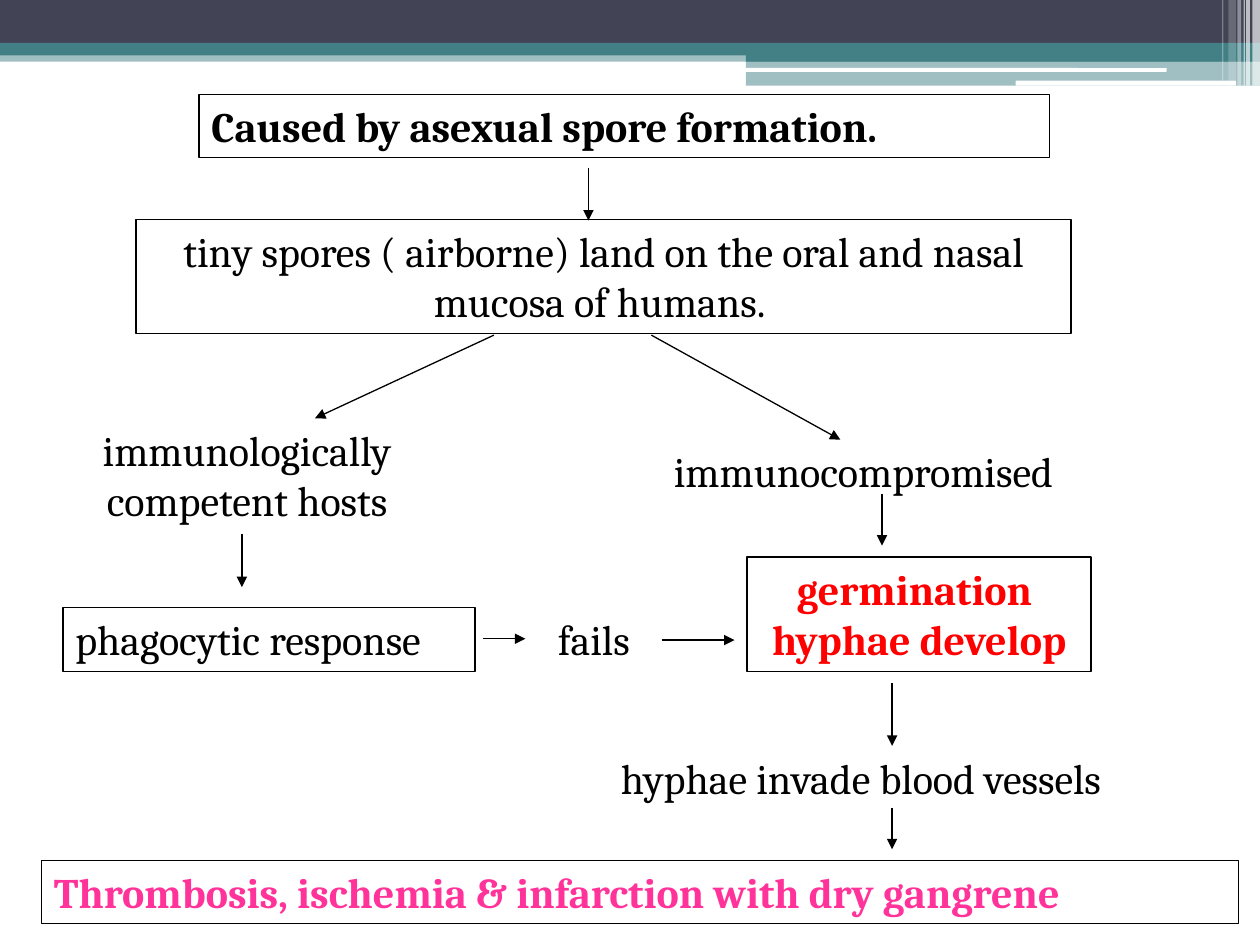
"""Build a flow chart slide on how spores lead to dry gangrene."""
import lxml.etree
import pptx
import pptx.dml.color
import pptx.enum.shapes
import pptx.enum.text
import pptx.oxml
import pptx.oxml.ns
import pptx.util

Inches = pptx.util.Inches
RGBColor = pptx.dml.color.RGBColor
SHAPE = pptx.enum.shapes.MSO_SHAPE
ALIGN = pptx.enum.text.PP_ALIGN
qn = pptx.oxml.ns.qn

BLACK = RGBColor(0x00, 0x00, 0x00)
WHITE = RGBColor(0xFF, 0xFF, 0xFF)
SLATE = RGBColor(0x42, 0x44, 0x56)
TEAL = RGBColor(0x43, 0x80, 0x86)
RED = RGBColor(0xFF, 0x00, 0x00)
PINK = RGBColor(0xFF, 0x33, 0x99)

PLAIN = {"name": "Cambria", "size": pptx.util.Pt(24), "bold": False}
BOLD = {**PLAIN, "bold": True}
FRAME = {"word_wrap": True, "vertical_anchor": pptx.enum.text.MSO_ANCHOR.TOP}

BARS = [
    (0, 0.4, 10, 0.09, TEAL, 50),
    (0, 0, 10, 0.34, SLATE, 100),
    (0, 0.34, 10, 0.1, TEAL, 100),
    (5.92, 0.39, 4.08, 0.1, TEAL, 100),
    (5.92, 0.48, 4.08, 0.2, TEAL, 50),
]
PILLS = [(5.91, 0.54, 3.35, 0.03), (8.06, 0.64, 1.75, 0.04)]
STRIPES = [
    (9.94, 0.06, 0.68, 65),
    (9.89, 0.03, 0.68, 65),
    (9.87, 0.01, 0.68, 60),
    (9.82, 0.03, 0.68, 40),
    (9.75, 0.06, 0.64, 20),
    (9.7, 0.01, 0.64, 30),
]
STEPS = [
    ((1.58, 0.75, 6.75, 0.5), ["Caused by asexual spore formation."],
     BOLD, BLACK, ALIGN.LEFT, True),
    ((1.08, 1.74, 7.42, 0.91),
     ["tiny spores ( airborne) land on the oral and nasal mucosa of humans. "],
     PLAIN, BLACK, ALIGN.CENTER, True),
    ((0.25, 3.32, 3.42, 0.9), ["immunologically competent hosts"],
     PLAIN, BLACK, ALIGN.CENTER, False),
    ((0.5, 4.82, 3.27, 0.51), ["phagocytic response"],
     PLAIN, BLACK, ALIGN.LEFT, True),
    ((4.33, 4.82, 0.89, 0.5), ["fails"], PLAIN, BLACK, ALIGN.LEFT, False),
    ((5.25, 3.49, 3.39, 0.5), ["immunocompromised"],
     PLAIN, BLACK, ALIGN.LEFT, False),
    ((5.93, 4.42, 2.73, 0.91), ["germination ", "hyphae develop"],
     BOLD, RED, ALIGN.CENTER, True),
    ((4.83, 5.92, 4.49, 0.5), ["hyphae invade blood vessels"],
     PLAIN, BLACK, ALIGN.LEFT, False),
    ((0.33, 6.83, 9.5, 0.5),
     ["Thrombosis, ischemia & infarction with dry gangrene"],
     BOLD, PINK, ALIGN.LEFT, True),
]
ARROWS = [
    (4.67, 1.33, 4.67, 1.75),
    (3.92, 2.66, 2.5, 3.32),
    (5.17, 2.66, 6.67, 3.49),
    (1.92, 4.24, 1.92, 4.66),
    (7, 3.92, 7, 4.33),
    (3.83, 5.07, 4.17, 5.07),
    (5.25, 5.08, 5.83, 5.08),
    (7.08, 5.42, 7.08, 5.92),
    (7.08, 6.41, 7.08, 6.74),
]


def put(item, values):
    """Set each named value on an item."""
    for name, value in values.items():
        setattr(item, name, value)


def shift(box, left, top):
    """Turn an offset within a box into slide lengths."""
    return box[0] + Inches(left), box[1] + Inches(top)


def add_bar(slide, box, part, color, alpha=100, kind=SHAPE.RECTANGLE):
    """Add a borderless bar with an opacity in percent."""
    left, top, width, height = part
    bar = slide.shapes.add_shape(
        kind, *shift(box, left, top), Inches(width), Inches(height))
    bar.shadow.inherit = False
    bar.fill.solid()
    bar.fill.fore_color.rgb = color
    bar.line.fill.background()
    if alpha < 100:
        tone = bar.fill._xPr.find(".//" + qn("a:srgbClr"))
        lxml.etree.SubElement(tone, qn("a:alpha"), val=str(alpha * 1000))


def add_band(slide, box):
    """Draw the layered band along the top of the box."""
    for *part, color, alpha in BARS:
        add_bar(slide, box, part, color, alpha)
    for part in PILLS:
        add_bar(slide, box, part, WHITE, kind=SHAPE.ROUNDED_RECTANGLE)
    for left, width, height, alpha in STRIPES:
        add_bar(slide, box, (left, 0, width, height), WHITE, alpha)


def add_step(slide, box, part, lines, style, color, align, edged):
    """Add one step of the flow, with or without a border."""
    left, top, width, height = part
    step = slide.shapes.add_textbox(
        *shift(box, left, top), Inches(width), Inches(height))
    if edged:
        step.line.color.rgb = BLACK
        step.line.width = pptx.util.Pt(0.75)
    frame = step.text_frame
    put(frame, FRAME)
    frame.text = "\n".join(lines)
    for para in frame.paragraphs:
        para.alignment = align
        for run in para.runs:
            put(run.font, style)
            run.font.color.rgb = color


def add_arrow(slide, box, start, end):
    """Add a thin black arrow between two points."""
    arrow = slide.shapes.add_connector(
        pptx.enum.shapes.MSO_CONNECTOR.STRAIGHT,
        *shift(box, *start), *shift(box, *end))
    arrow.line.color.rgb = BLACK
    arrow.line.width = pptx.util.Pt(0.75)
    lxml.etree.SubElement(
        arrow.line._get_or_add_ln(), qn("a:tailEnd"), type="triangle")
    lxml.etree.SubElement(arrow._element.spPr, qn("a:effectLst"))


def add_flow(slide, box):
    """Place the steps and arrows of the flow in the box."""
    for step in STEPS:
        add_step(slide, box, *step)
    for arrow in ARROWS:
        add_arrow(slide, box, arrow[:2], arrow[2:])


def main():
    """Build and save the slide."""
    deck = pptx.Presentation()
    put(deck, {"slide_width": Inches(10), "slide_height": Inches(7.5)})
    slide = deck.slides.add_slide(deck.slide_layouts[6])
    page = (Inches(0), Inches(0), deck.slide_width, deck.slide_height)
    add_band(slide, page)
    add_flow(slide, page)
    deck.save("out.pptx")


if __name__ == "__main__":
    main()
